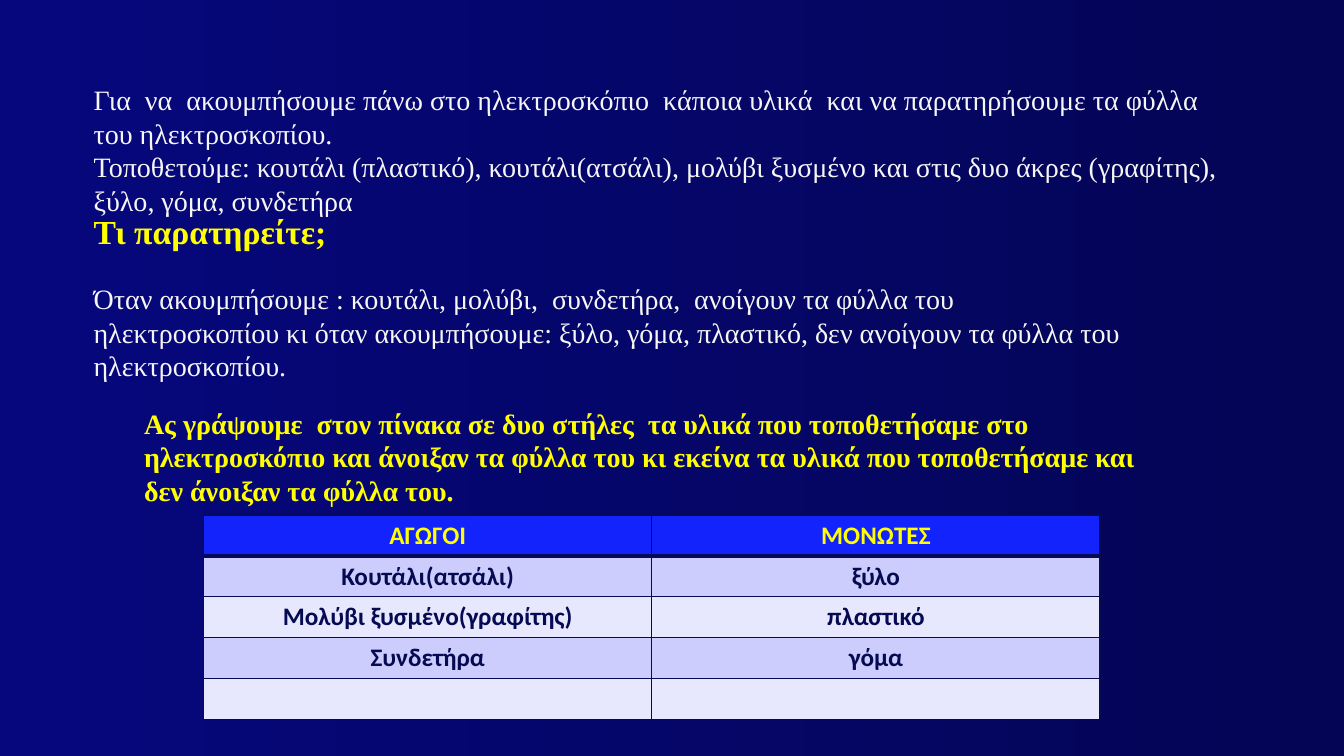
"""Build the slide on electroscope conductors and insulators."""
from dataclasses import dataclass

from pptx import Presentation
from pptx.dml.color import RGBColor
from pptx.enum.text import MSO_ANCHOR, PP_ALIGN
from pptx.oxml import parse_xml
from pptx.oxml.ns import nsdecls
from pptx.util import Inches, Pt

CENTER = PP_ALIGN.CENTER
TOP = MSO_ANCHOR.TOP


@dataclass(frozen=True)
class Theme:
    """Hold the colours, fonts and type sizes of the slide."""
    dark: str = "040554"
    deep: str = "06077C"
    navy: str = "050A52"
    blue: str = "1224FB"
    bands: tuple = ("CCCDFD", "E7E8FE")
    white: str = "F6F6F6"
    yellow: str = "FFFF00"
    serif: str = "Times New Roman"
    sans: str = "Calibri"
    small: int = 18
    body: int = 20
    large: int = 24


THEME = Theme()
BODY = {"name": THEME.serif, "size": Pt(THEME.body), "bold": False, "color": THEME.white}
BOLD = {**BODY, "bold": True, "color": THEME.yellow}
HEAD = {**BOLD, "size": Pt(THEME.large)}
CELL = {"name": THEME.sans, "size": Pt(THEME.small), "bold": True, "color": THEME.navy}
TITLE = {**CELL, "color": THEME.yellow}

STEPS = (
    "Για  να  ακουμπήσουμε πάνω στο ηλεκτροσκόπιο  κάποια υλικά  και να παρατηρήσουμε "
    "τα φύλλα του ηλεκτροσκοπίου.",
    "Τοποθετούμε: κουτάλι (πλαστικό), κουτάλι(ατσάλι), μολύβι ξυσμένο και στις δυο "
    "άκρες (γραφίτης), ξύλο, γόμα, συνδετήρα",
)
ASK = "Τι παρατηρείτε;"
REPLY = (
    "Όταν ακουμπήσουμε : κουτάλι, μολύβι,  συνδετήρα,  ανοίγουν τα φύλλα του "
    "ηλεκτροσκοπίου κι όταν ακουμπήσουμε: ξύλο, γόμα, πλαστικό, δεν ανοίγουν τα "
    "φύλλα του ηλεκτροσκοπίου."
)
TASK = (
    "Ας γράψουμε  στον πίνακα σε δυο στήλες  τα υλικά που τοποθετήσαμε στο "
    "ηλεκτροσκόπιο και άνοιξαν τα φύλλα του κι εκείνα τα υλικά που τοποθετήσαμε "
    "και δεν άνοιξαν τα φύλλα του."
)
ROWS = (
    ("ΑΓΩΓΟΙ", "ΜΟΝΩΤΕΣ"),
    ("Κουτάλι(ατσάλι)", "ξύλο"),
    ("Μολύβι ξυσμένο(γραφίτης)", "πλαστικό"),
    ("Συνδετήρα", "γόμα"),
    ("", ""),
)


def style(font, form):
    """Apply a dict of format values to a font."""
    for key, value in form.items():
        if key == "color":
            font.color.rgb = RGBColor.from_string(value)
        else:
            setattr(font, key, value)


def paint(slide):
    """Fill the background with the blue gradient."""
    fill = slide.background.fill
    fill.gradient()
    fill.gradient_angle = 180
    for stop, color in zip(fill.gradient_stops, (THEME.dark, THEME.deep)):
        stop.color.rgb = RGBColor.from_string(color)


def add_text(slide, box, parts, gap=0):
    """Add a text box of (text, format) paragraphs with a gap between them."""
    frame = slide.shapes.add_textbox(*map(Inches, box)).text_frame
    frame.word_wrap = True
    frame.vertical_anchor = TOP
    for pos, (text, form) in enumerate(parts):
        para = frame.add_paragraph() if pos else frame.paragraphs[0]
        para.space_before = Pt(gap if pos else 0)
        run = para.add_run()
        run.text = text
        style(run.font, form)


def edge(cell, side, width):
    """Draw one border of a cell, its width in points."""
    cell._tc.get_or_add_tcPr().append(parse_xml(
        f'<a:ln{side} {nsdecls("a")} w="{Pt(width)}"><a:solidFill>'
        f'<a:srgbClr val="{THEME.navy}"/></a:solidFill></a:ln{side}>'))


def add_grid(slide, box, rows):
    """Add the table with a header row and banded rows."""
    table = slide.shapes.add_table(len(rows), len(rows[0]), *map(Inches, box)).table
    table.horz_banding = False
    for row, texts in enumerate(rows):
        fill = THEME.bands[(row - 1) % 2] if row else THEME.blue
        wide = {0: "B", 1: "T"}.get(row)
        for col, text in enumerate(texts):
            cell = table.cell(row, col)
            for side in "LRTB":
                edge(cell, side, 3 if side == wide else 1)
            cell.fill.solid()
            cell.fill.fore_color.rgb = RGBColor.from_string(fill)
            cell.text = text
            para = cell.text_frame.paragraphs[0]
            para.alignment = CENTER
            for font in (para.font, *(run.font for run in para.runs)):
                style(font, CELL if row else TITLE)


def main():
    """Build and save the slide."""
    deck = Presentation()
    deck.slide_width, deck.slide_height = Inches(13.33), Inches(7.5)
    slide = deck.slides.add_slide(deck.slide_layouts[6])
    paint(slide)
    add_text(slide, (0.83, 0.77, 11.54, 1.78), [(step, BODY) for step in STEPS])
    add_text(slide, (0.83, 2.04, 10.61, 2.12), [(ASK, HEAD), (REPLY, BODY)], gap=22)
    add_grid(slide, (2.02, 5.11, 8.89, 2.03), ROWS)
    add_text(slide, (1.33, 3.98, 10.11, 1.11), [(TASK, BOLD)])
    deck.save("out.pptx")


if __name__ == "__main__":
    main()
